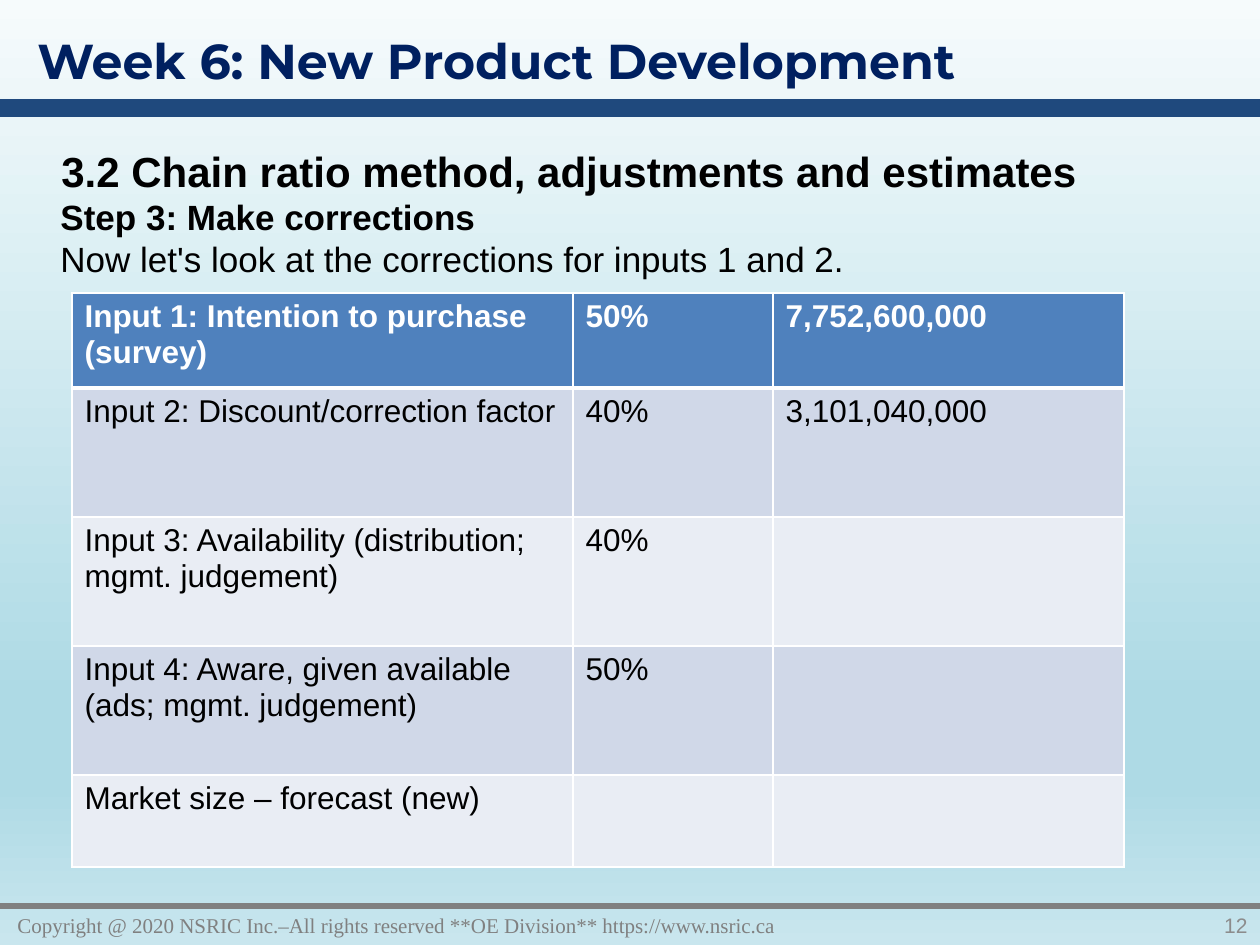
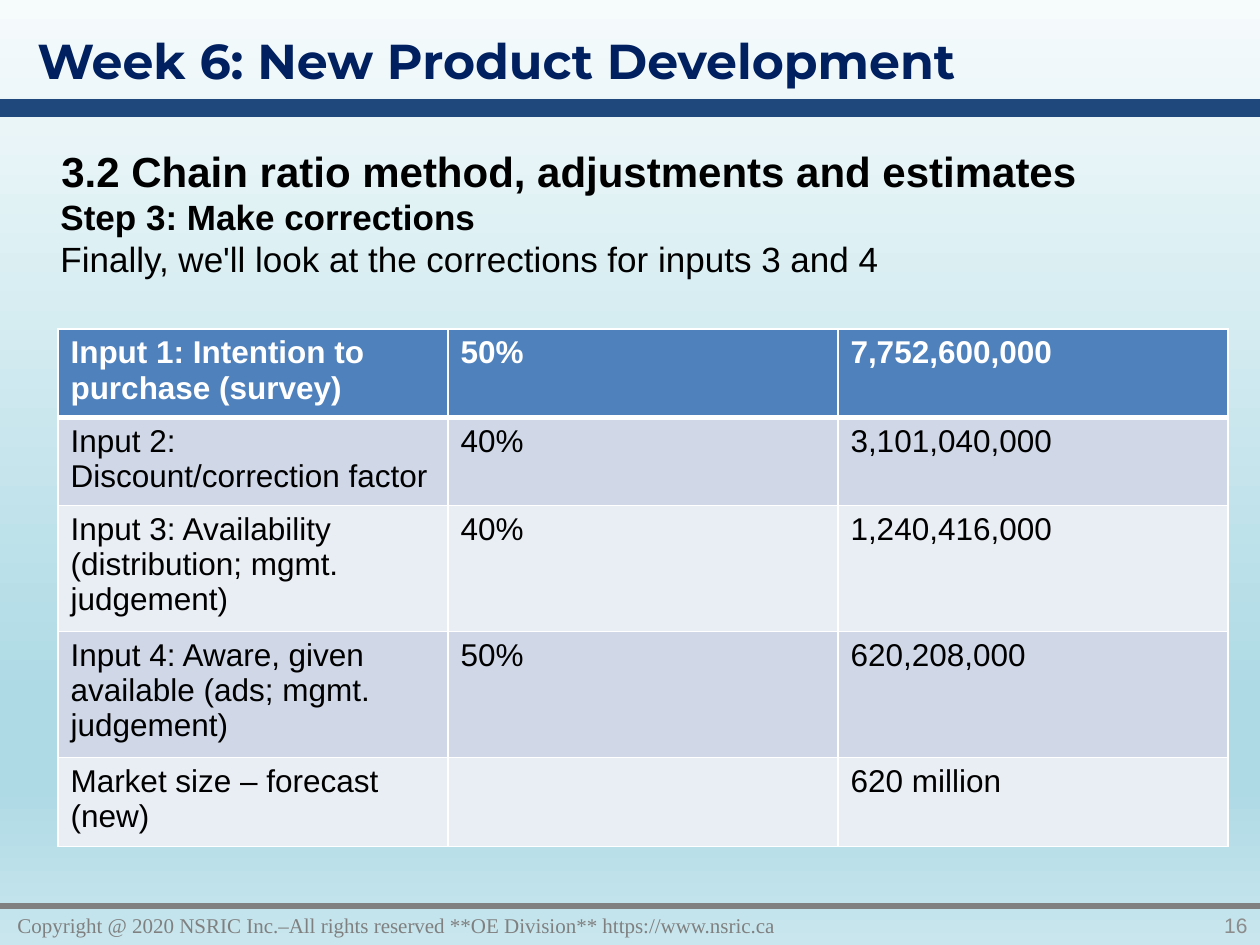
"""Build two slides on correcting a chain ratio sales forecast."""
from collections import namedtuple
from dataclasses import dataclass

from lxml import etree
from pptx import Presentation
from pptx import util as u
from pptx.dml import color
from pptx.enum import shapes, text
from pptx.oxml import ns

Box = namedtuple("Box", "left top width height")
PX_PER_INCH = 126


@dataclass(frozen=True)
class Theme:
    """Colours, fonts and type sizes shared by the slides."""

    black: str = "000000"
    white: str = "FFFFFF"
    title: str = "002060"
    band: str = "1F497D"
    footer: str = "808080"
    number: str = "8C8C8C"
    header_fill: str = "4F81BD"
    row_fills: tuple = ("D0D8E8", "E9EDF4")
    background: tuple = ((0, "F6FBFC"), (74, "AEDAE5"), (83, "AEDAE5"), (100, "C9E6EE"))
    body_font: str = "Arial"
    title_font: str = "Montserrat"
    footer_font: str = "Times New Roman"
    title_size: int = 28
    heading_size: int = 24
    body_size: int = 20
    table_size: int = 18
    footer_size: int = 12


THEME = Theme()
SLIDE = Box(0, 0, 1260, 945)
TITLE = "Week 6: New Product Development"
HEADING = "3.2 Chain ratio method, adjustments and estimates"
STEP = "Step 3: Make corrections"
COPYRIGHT = "Copyright @ 2020 NSRIC Inc.–All rights reserved **OE Division** https://www.nsric.ca"
INPUTS = (
    ("Input 1: Intention to purchase (survey)", "50%"),
    ("Input 2: Discount/correction factor", "40%"),
    ("Input 3: Availability (distribution; mgmt. judgement)", "40%"),
    ("Input 4: Aware, given available (ads; mgmt. judgement)", "50%"),
    ("Market size – forecast (new)", ""),
)
SLIDES = (
    {
        "number": "12",
        "lead": "Now let's look at the corrections for inputs 1 and 2.",
        "results": ("7,752,600,000", "3,101,040,000", "", "", ""),
        "origin": (72, 293),
        "columns": (501, 200, 351),
        "rows": (95, 129, 129, 129, 92),
    },
    {
        "number": "16",
        "lead": "Finally, we'll look at the corrections for inputs 3 and 4",
        "results": ("7,752,600,000", "3,101,040,000", "1,240,416,000", "620,208,000", "620 million"),
        "origin": (58, 329),
        "columns": (390, 390, 390),
        "rows": (88, 88, 126, 126, 89),
    },
)


def px(length):
    """Turn pixels into EMU."""
    return u.Emu(round(length * u.Inches(1) / PX_PER_INCH))


def style(value, size, colour, name=THEME.body_font, bold=False):
    """Pair a line of text with its font format."""
    return value, {"size": u.Pt(size), "name": name, "bold": bold}, colour


def write(frame, lines, alignment=text.PP_ALIGN.LEFT):
    """Fill a text frame with styled lines, one per paragraph."""
    for index, (value, formats, colour) in enumerate(lines):
        paragraph = frame.add_paragraph() if index else frame.paragraphs[0]
        paragraph.alignment = alignment
        run = paragraph.add_run()
        run.text = value
        for key, setting in formats.items():
            setattr(run.font, key, setting)
        run.font.color.rgb = color.RGBColor.from_string(colour)


def add_text(slide, box, lines, anchor=text.MSO_ANCHOR.TOP, alignment=text.PP_ALIGN.LEFT):
    """Add a wrapping text box."""
    frame = slide.shapes.add_textbox(*map(px, box)).text_frame
    frame.word_wrap = True
    frame.vertical_anchor = anchor
    write(frame, lines, alignment)


def add_rule(slide, box, y, colour, width):
    """Draw a line across the box at a height below its top."""
    ends = (box.left, box.top + y, box.left + box.width, box.top + y)
    rule = slide.shapes.add_connector(shapes.MSO_CONNECTOR.STRAIGHT, *map(px, ends))
    rule.line.color.rgb = color.RGBColor.from_string(colour)
    rule.line.width = u.Pt(width)
    etree.SubElement(rule.element.spPr, ns.qn("a:effectLst"))


def paint_background(slide):
    """Fill the slide with the vertical gradient of the theme."""
    fill = slide.background.fill
    fill.gradient()
    fill.gradient_angle = 270
    stops = slide.element.find(".//" + ns.qn("a:gsLst"))
    for stop in list(stops):
        stops.remove(stop)
    for position, colour in THEME.background:
        stop = etree.SubElement(stops, ns.qn("a:gs"), pos=str(position * 1000))
        etree.SubElement(stop, ns.qn("a:srgbClr"), val=colour)


def add_header(slide, box):
    """Place the title above its band."""
    add_rule(slide, box, 108, THEME.band, 10)
    title = style(TITLE, THEME.title_size, THEME.title, THEME.title_font, True)
    add_text(slide, Box(box.left + 25, box.top + 24, 1104, 72), [title])


def add_footer(slide, box, number):
    """Place the rule, the copyright line and the slide number."""
    add_rule(slide, box, 0, THEME.footer, 3)
    copyright_line = style(COPYRIGHT, THEME.footer_size, THEME.footer, THEME.footer_font)
    add_text(slide, Box(box.left + 5, box.top, 1042, box.height), [copyright_line],
             text.MSO_ANCHOR.MIDDLE)
    number_line = style(number, THEME.footer_size, THEME.number)
    add_text(slide, Box(box.left + box.width - 178, box.top, 178, box.height), [number_line],
             text.MSO_ANCHOR.MIDDLE, text.PP_ALIGN.RIGHT)


def add_intro(slide, box, lead):
    """Place the section heading, the step and its lead sentence."""
    heading = style(HEADING, THEME.heading_size, THEME.black, bold=True)
    add_text(slide, Box(box.left, box.top, box.width, 63), [heading])
    step = style(STEP, THEME.body_size, THEME.black, bold=True)
    add_text(slide, Box(box.left - 1, box.top + 50, box.width, box.height - 50),
             [step, style(lead, THEME.body_size, THEME.black)])


def add_borders(cell, top, bottom):
    """Draw white cell borders with the given top and bottom widths."""
    properties = cell._tc.get_or_add_tcPr()
    for side, width in {"L": 1, "R": 1, "T": top, "B": bottom}.items():
        line = etree.SubElement(properties, ns.qn(f"a:ln{side}"), w=str(u.Pt(width)))
        fill = etree.SubElement(line, ns.qn("a:solidFill"))
        etree.SubElement(fill, ns.qn("a:srgbClr"), val=THEME.white)


def add_forecast_table(slide, box, columns, rows, results):
    """Place the table of inputs, ratios and resulting market sizes."""
    table = slide.shapes.add_table(len(rows), len(columns), *map(px, box)).table
    for column, width in zip(table.columns, columns):
        column.width = px(width)
    for index, (height, entry, result) in enumerate(zip(rows, INPUTS, results)):
        table.rows[index].height = px(height)
        header = index == 0
        fill = THEME.header_fill if header else THEME.row_fills[(index - 1) % 2]
        ink = THEME.white if header else THEME.black
        for cell, value in zip(table.rows[index].cells, (*entry, result)):
            add_borders(cell, 3 if index == 1 else 1, 3 if header else 1)
            cell.fill.solid()
            cell.fill.fore_color.rgb = color.RGBColor.from_string(fill)
            if value:
                write(cell.text_frame, [style(value, THEME.table_size, ink, bold=header)])


def add_forecast_slide(presentation, content):
    """Add one slide with its header, intro, table and footer."""
    slide = presentation.slides.add_slide(presentation.slide_layouts[6])
    paint_background(slide)
    add_header(slide, Box(0, 0, SLIDE.width, 117))
    add_footer(slide, Box(0, 906, SLIDE.width, 39), content["number"])
    add_intro(slide, Box(49, 139, 1153, 150), content["lead"])
    columns, rows = content["columns"], content["rows"]
    box = Box(*content["origin"], sum(columns), sum(rows))
    add_forecast_table(slide, box, columns, rows, content["results"])


def main():
    """Build and save the presentation."""
    presentation = Presentation()
    presentation.slide_width = px(SLIDE.width)
    presentation.slide_height = px(SLIDE.height)
    for content in SLIDES:
        add_forecast_slide(presentation, content)
    presentation.save("out.pptx")


if __name__ == "__main__":
    main()
